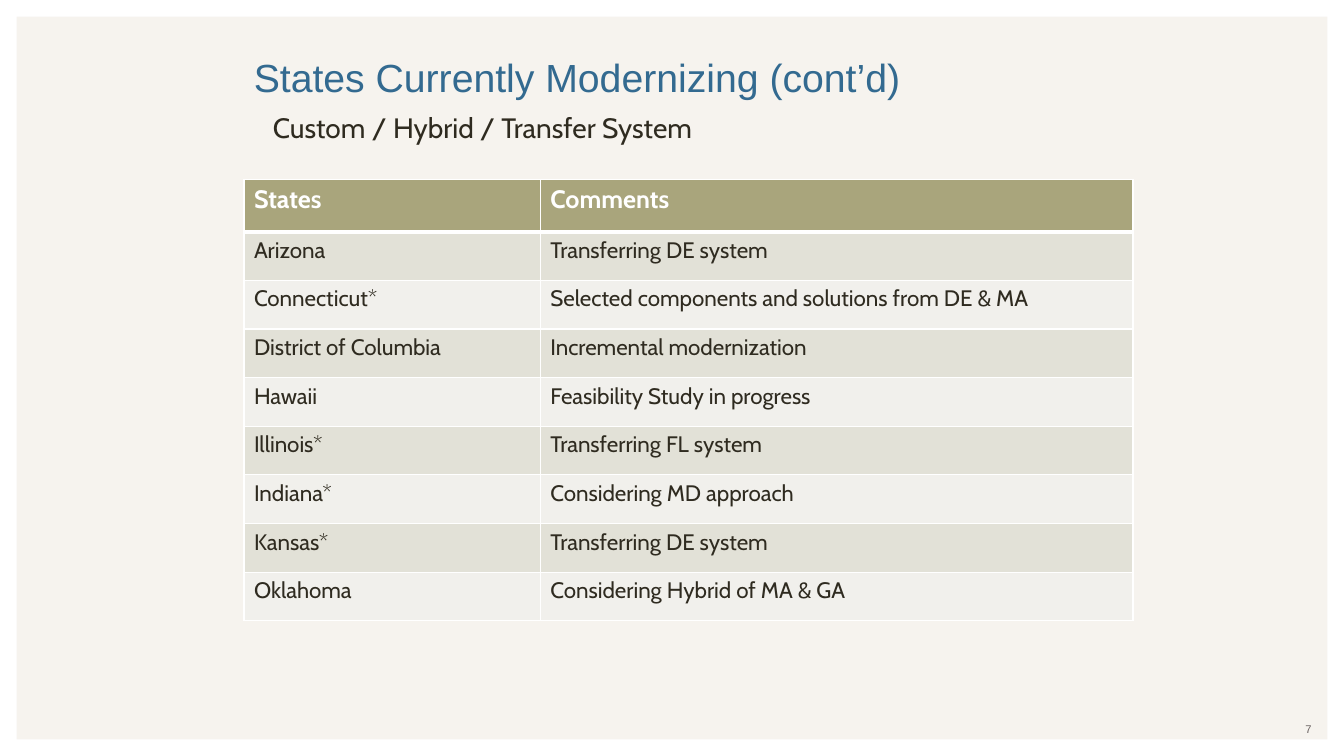
"""Build the slide listing states that are modernizing their systems."""
from dataclasses import dataclass

from lxml import etree
from pptx import Presentation
from pptx import util as u
from pptx.dml.color import RGBColor
from pptx.enum import shapes, text
from pptx.oxml.ns import qn

WHITE = RGBColor(0xFF, 0xFF, 0xFF)
CREAM = RGBColor(0xF6, 0xF3, 0xEE)
BLUE = RGBColor(0x33, 0x6A, 0x90)
INK = RGBColor(0x2F, 0x2B, 0x20)
GREY = RGBColor(0x6C, 0x64, 0x63)
OLIVE = RGBColor(0xA9, 0xA5, 0x7C)
BANDS = (RGBColor(0xE2, 0xE1, 0xD7), RGBColor(0xF1, 0xF0, 0xEC))

UNIT = u.Inches(0.1)
SLIDE_COLUMNS, SLIDE_ROWS = 133.33, 75
LEFT_MARGIN = 24.2
TABLE_TOP, TABLE_HEIGHT, HEADER_HEIGHT = 17.8, 43.8, 5.2
COLUMN_WIDTHS = (29.4, 58.8)
THIN, THICK = u.Pt(1), u.Pt(3)


@dataclass(frozen=True)
class Style:
    font: str
    size: int
    color: RGBColor
    bold: bool = False


@dataclass(frozen=True)
class Label:
    words: str
    column: float
    row: float
    columns: float
    rows: float
    style: Style
    anchor: text.MSO_ANCHOR = text.MSO_ANCHOR.TOP
    align: text.PP_ALIGN = text.PP_ALIGN.LEFT


@dataclass(frozen=True)
class State:
    name: str
    comment: str


HEADER_STYLE = Style("Cabin", 18, WHITE, True)
BODY_STYLE = Style("Cabin", 16, INK)

LABELS = (
    Label("7", 100, 71.1, 31.1, 2.4, Style("Arial", 8, GREY),
          text.MSO_ANCHOR.MIDDLE, text.PP_ALIGN.RIGHT),
    Label("States Currently Modernizing (cont’d)", LEFT_MARGIN, 3.9, 85, 6.5,
          Style("Arial", 28, BLUE), text.MSO_ANCHOR.BOTTOM),
    Label("Custom / Hybrid / Transfer System", 26.1, 10.5, 81.1, 4.4,
          Style("Cabin", 20, INK)),
)

HEADER = State("States", "Comments")
STATES = (
    State("Arizona", "Transferring DE system"),
    State("Connecticut*", "Selected components and solutions from DE & MA"),
    State("District of Columbia", "Incremental modernization"),
    State("Hawaii", "Feasibility Study in progress"),
    State("Illinois*", "Transferring FL system"),
    State("Indiana*", "Considering MD approach"),
    State("Kansas*", "Transferring DE system"),
    State("Oklahoma", "Considering Hybrid of MA & GA"),
)


def grid(cells: float) -> u.Emu:
    return u.Emu(round(cells * UNIT))


def add_span(para, words: str, style: Style) -> None:
    span = para.add_run()
    span.text = words
    span.font.name = style.font
    span.font.size = u.Pt(style.size)
    span.font.bold = style.bold
    span.font.color.rgb = style.color


def add_frame(page) -> None:
    frame = page.shapes.add_shape(
        shapes.MSO_SHAPE.FRAME, 0, 0, grid(SLIDE_COLUMNS), grid(SLIDE_ROWS))
    frame.adjustments[0] = 0.022
    frame.shadow.inherit = False
    frame.fill.solid()
    frame.fill.fore_color.rgb = WHITE
    frame.line.fill.background()


def add_label(page, label: Label) -> None:
    box = page.shapes.add_textbox(
        grid(label.column), grid(label.row), grid(label.columns), grid(label.rows))
    box.text_frame.word_wrap = True
    box.text_frame.vertical_anchor = label.anchor
    para = box.text_frame.paragraphs[0]
    para.alignment = label.align
    add_span(para, label.words, label.style)


def add_borders(cell, top: int, bottom: int) -> None:
    properties = cell._tc.get_or_add_tcPr()
    for side, width in (("L", THIN), ("R", THIN), ("T", top), ("B", bottom)):
        line = etree.SubElement(properties, qn(f"a:ln{side}"), w=str(int(width)))
        fill = etree.SubElement(line, qn("a:solidFill"))
        etree.SubElement(fill, qn("a:srgbClr"), val=str(WHITE))


def add_states_table(page) -> None:
    records = (HEADER, *STATES)
    table = page.shapes.add_table(
        len(records), len(COLUMN_WIDTHS), grid(LEFT_MARGIN), grid(TABLE_TOP),
        grid(sum(COLUMN_WIDTHS)), grid(TABLE_HEIGHT)).table
    for column, width in zip(table.columns, COLUMN_WIDTHS):
        column.width = grid(width)
    body_height = (TABLE_HEIGHT - HEADER_HEIGHT) / len(STATES)
    for index, (row, record) in enumerate(zip(table.rows, records)):
        is_header = index == 0
        row.height = grid(HEADER_HEIGHT if is_header else body_height)
        for cell, words in zip(row.cells, (record.name, record.comment)):
            add_borders(cell, THICK if index == 1 else THIN,
                        THICK if is_header else THIN)
            cell.fill.solid()
            cell.fill.fore_color.rgb = OLIVE if is_header else BANDS[(index - 1) % 2]
            add_span(cell.text_frame.paragraphs[0], words,
                     HEADER_STYLE if is_header else BODY_STYLE)


def main() -> None:
    deck = Presentation()
    deck.slide_width, deck.slide_height = grid(SLIDE_COLUMNS), grid(SLIDE_ROWS)
    page = deck.slides.add_slide(deck.slide_layouts[6])
    page.background.fill.solid()
    page.background.fill.fore_color.rgb = CREAM
    add_frame(page)
    for label in LABELS:
        add_label(page, label)
    add_states_table(page)
    deck.save("out.pptx")


if __name__ == "__main__":
    main()
